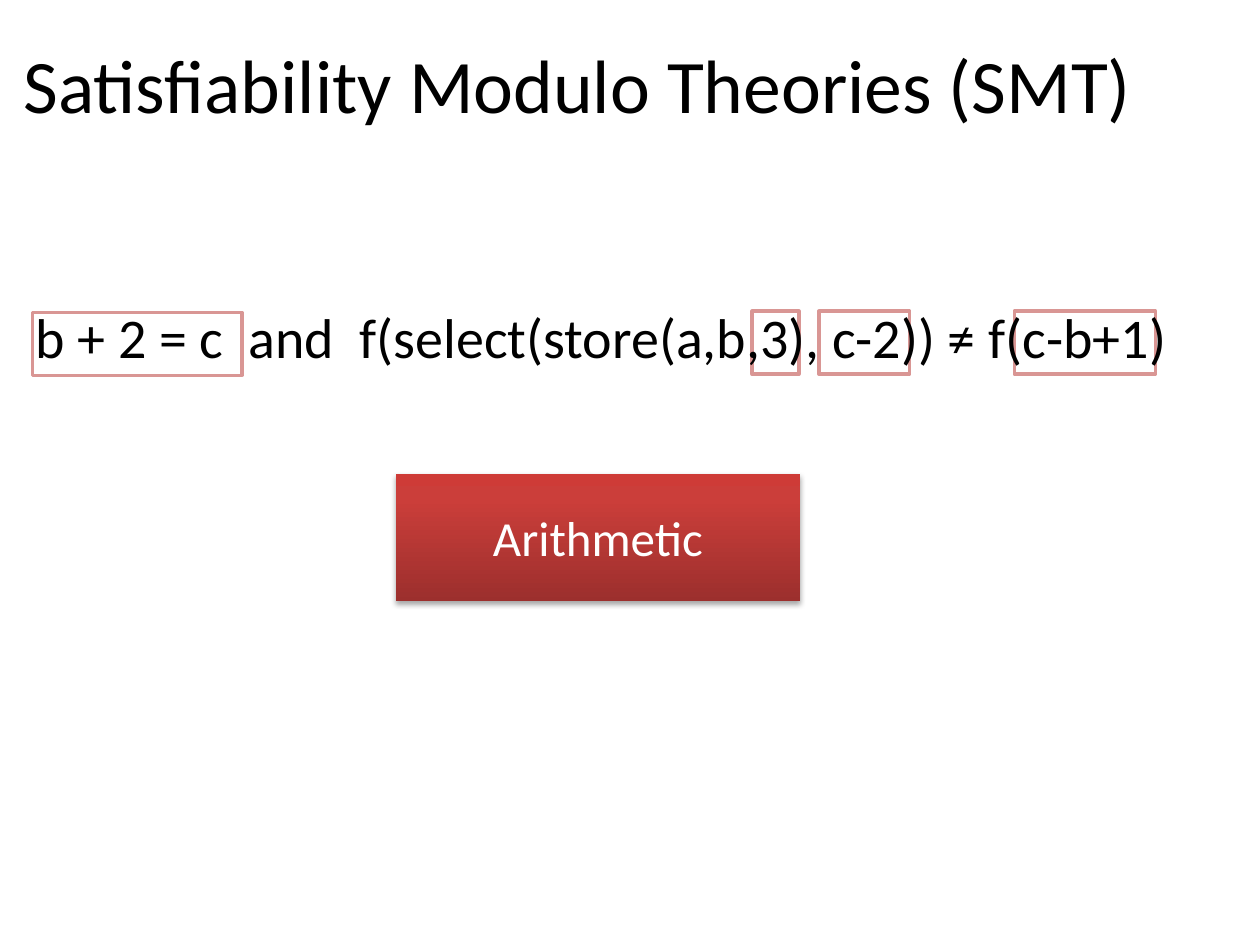
from copy import deepcopy
from dataclasses import dataclass
from lxml.etree import SubElement
from pptx import Presentation
from pptx.dml.color import RGBColor
from pptx.enum.shapes import MSO_SHAPE
from pptx.enum.text import MSO_ANCHOR, PP_ALIGN
from pptx.oxml.ns import qn
from pptx.util import Inches, Pt


@dataclass(frozen=True)
class Theme:
    font: str = "Calibri"
    ink: str = "000000"
    light: str = "FFFFFF"
    frame: str = "D99694"
    fade: tuple = ((0, "9C2F2D"), (0.8, "CB3E3A"), (1, "CE3B37"))
    title: float = 43.2
    body: float = 32
    label: float = 28


def write(shape, text, font, size, color, space=1.0, anchor=MSO_ANCHOR.MIDDLE):
    frame = shape.text_frame
    frame.word_wrap = True
    frame.vertical_anchor = anchor
    line = frame.paragraphs[0]
    line.alignment = PP_ALIGN.CENTER
    line.line_spacing = space
    run = line.add_run()
    run.text = text
    run.font.name = font
    run.font.size = Pt(size)
    run.font.color.rgb = RGBColor.from_string(color)


class Deck:
    COLS, ROWS = 100, 75

    def __init__(self, theme):
        self.theme = theme
        self.file = Presentation()
        self.file.slide_width = Inches(10)
        self.file.slide_height = Inches(7.5)
        self.slide = self.file.slides.add_slide(self.file.slide_layouts[6])

    def place(self, col, row, wide, high):
        across = self.file.slide_width / self.COLS
        down = self.file.slide_height / self.ROWS
        return [round(n * unit) for n, unit in
                ((col, across), (row, down), (wide, across), (high, down))]

    def text(self, area, words, size, **style):
        box = self.slide.shapes.add_textbox(*self.place(*area))
        write(box, words, self.theme.font, size, self.theme.ink, **style)

    def rect(self, area):
        box = self.slide.shapes.add_shape(MSO_SHAPE.RECTANGLE, *self.place(*area))
        box.shadow.inherit = False
        return box

    def frame(self, area):
        box = self.rect(area)
        box.fill.background()
        box.line.color.rgb = RGBColor.from_string(self.theme.frame)
        box.line.width = Pt(2)

    def block(self, area, words):
        box = self.rect(area)
        box.line.fill.background()
        self.blend(box)
        self.shade(box)
        write(box, words, self.theme.font, self.theme.label, self.theme.light)

    def blend(self, box):
        box.fill.gradient()
        box.fill.gradient_angle = 90
        stops = next(box._element.spPr.iter(qn("a:gsLst")))
        stops.append(deepcopy(stops[-1]))
        for stop, (spot, color) in zip(box.fill.gradient_stops, self.theme.fade):
            stop.position = spot
            stop.color.rgb = RGBColor.from_string(color)

    def shade(self, box):
        effects = box._element.spPr.find(qn("a:effectLst"))
        shadow = SubElement(effects, qn("a:outerShdw"), blurRad=str(Pt(3.1)),
                            dist=str(Pt(1.8)), dir="5400000", rotWithShape="0")
        color = SubElement(shadow, qn("a:srgbClr"), val=self.theme.ink)
        SubElement(color, qn("a:alpha"), val="35000")


def main():
    theme = Theme()
    deck = Deck(theme)
    deck.text((0, 2.5, 91.7, 8.2), "Satisfiability Modulo Theories (SMT)", theme.title)
    for col, row, wide in ((2.6, 24.8, 16.6), (80.5, 24.7, 11.2),
                           (65, 24.7, 7.2), (59.7, 24.7, 3.7)):
        deck.frame((col, row, wide, 5))
    deck.block((31.4, 37.6, 32.1, 10.1), "Arithmetic")
    deck.text((-0.3, 24.1, 96.1, 5.9),
              "b + 2 = c  and  f(select(store(a,b,3), c-2)) ≠ f(c-b+1)",
              theme.body, space=0.9, anchor=MSO_ANCHOR.TOP)
    deck.file.save("out.pptx")


if __name__ == "__main__":
    main()
